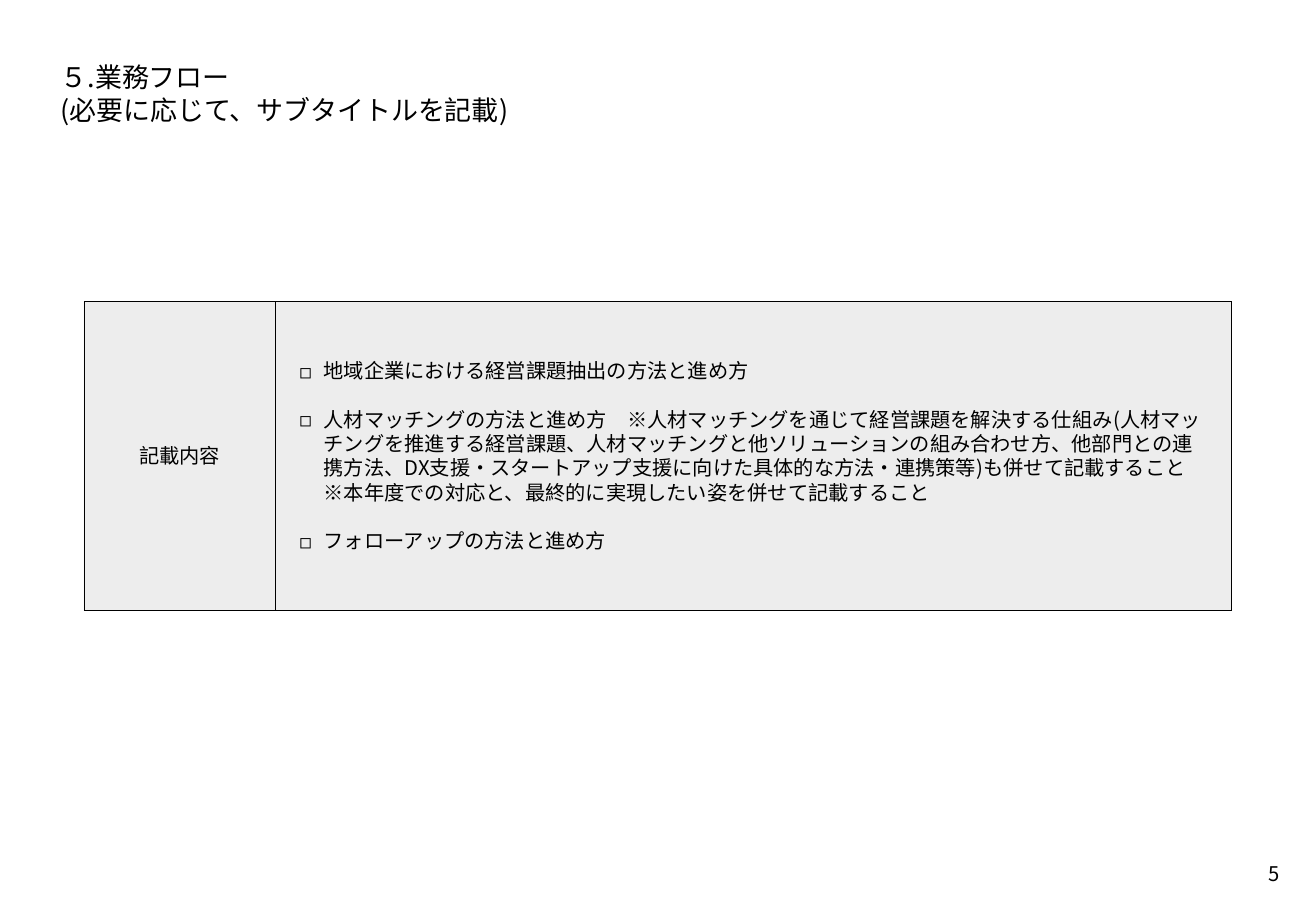
"""Build the workflow guidance slide with its title, label and checklist."""
from dataclasses import dataclass

from pptx import Presentation
from pptx.dml import color
from pptx.enum import dml, shapes, text
from pptx.oxml import ns, xmlchemy
from pptx.shapes import autoshape
from pptx.slide import Slide
from pptx.util import Pt


@dataclass(frozen=True)
class Theme:
    font: str = "Noto Sans CJK JP"
    ink: str = "000000"
    panel: str = "EDEDED"
    title_size: float = 16
    body_size: float = 12
    leading: float = 1.2
    border: float = 0.25
    hang: float = 14.4


@dataclass(frozen=True)
class Block:
    left: float
    top: float
    width: float
    height: float
    items: tuple[str, ...]
    size: float
    inset: float
    align: text.PP_ALIGN = text.PP_ALIGN.LEFT
    anchor: text.MSO_ANCHOR = text.MSO_ANCHOR.TOP
    wrap: bool = True
    gap: float = 0
    bullet: str = ""
    panel: bool = False


THEME = Theme()
PANEL_TOP, PANEL_HEIGHT = 178.6, 182.9
LABEL_LEFT, LABEL_WIDTH, LIST_WIDTH = 49.7, 113.4, 566.9

TITLE = Block(21.6, 21.6, 737.3, 56.9,
              ("５.業務フロー\v(必要に応じて、サブタイトルを記載)",),
              THEME.title_size, 14.4)
CHECKLIST = Block(
    LABEL_LEFT + LABEL_WIDTH, PANEL_TOP, LIST_WIDTH, PANEL_HEIGHT,
    ("地域企業における経営課題抽出の方法と進め方",
     "人材マッチングの方法と進め方　※人材マッチングを通じて経営課題を解決する仕組み"
     "(人材マッチングを推進する経営課題、人材マッチングと他ソリューションの組み合わせ方、"
     "他部門との連携方法、DX支援・スタートアップ支援に向けた具体的な方法・連携策等)"
     "も併せて記載すること\v※本年度での対応と、最終的に実現したい姿を併せて記載すること",
     "フォローアップの方法と進め方"),
    THEME.body_size, 14.4, anchor=text.MSO_ANCHOR.MIDDLE,
    gap=THEME.body_size * THEME.leading, bullet="◻", panel=True)
LABEL = Block(LABEL_LEFT, PANEL_TOP, LABEL_WIDTH, PANEL_HEIGHT, ("記載内容",),
              THEME.body_size, 7.2, text.PP_ALIGN.CENTER,
              text.MSO_ANCHOR.MIDDLE, panel=True)
PAGE_NUMBER = Block(737.3, 503.3, 28.1, 28.1, ("5",), THEME.body_size, 7.2,
                    text.PP_ALIGN.RIGHT, wrap=False)


def apply(target: object, values: dict[str, object]) -> None:
    """Set every named attribute on the target."""
    for name, value in values.items():
        setattr(target, name, value)


def add_child(parent: xmlchemy.BaseOxmlElement, tag: str, **values: str) -> None:
    """Append a DrawingML child with the given attributes."""
    child = parent.makeelement(ns.qn(tag), values)
    parent.append(child)


def paint_panel(box: autoshape.Shape) -> None:
    """Give the box the grey fill and the thin dotted border."""
    box.fill.solid()
    box.fill.fore_color.rgb = color.RGBColor.from_string(THEME.panel)
    box.line.color.rgb = color.RGBColor.from_string(THEME.ink)
    apply(box.line, {"width": Pt(THEME.border),
                     "dash_style": dml.MSO_LINE.ROUND_DOT})


def fill_box(box: autoshape.Shape, block: Block) -> None:
    """Place the box and write its paragraphs."""
    apply(box, {side: Pt(getattr(block, side))
                for side in ("left", "top", "width", "height")})
    frame = box.text_frame
    apply(frame, {"word_wrap": block.wrap,
                  "auto_size": text.MSO_AUTO_SIZE.NONE,
                  "vertical_anchor": block.anchor})
    apply(frame, {f"margin_{side}": Pt(block.inset)
                  for side in ("left", "top", "right", "bottom")})
    if block.panel:
        paint_panel(box)
    for index, item in enumerate(block.items):
        para = frame.add_paragraph() if index else frame.paragraphs[0]
        para.text = item
        apply(para, {"alignment": block.align,
                     "line_spacing": Pt(block.size * THEME.leading),
                     "space_before": Pt(block.gap if index else 0),
                     "space_after": Pt(0)})
        if block.bullet:
            properties = para._p.get_or_add_pPr()
            properties.set("marL", str(Pt(THEME.hang)))
            properties.set("indent", str(-Pt(THEME.hang)))
            add_child(properties, "a:buFont", typeface=THEME.font)
            add_child(properties, "a:buChar", char=block.bullet)
        for span in para.runs:
            apply(span.font, {"name": THEME.font, "size": Pt(block.size)})
            span.font.color.rgb = color.RGBColor.from_string(THEME.ink)
            add_child(span._r.get_or_add_rPr(), "a:ea", typeface=THEME.font)


def add_label(page: Slide) -> autoshape.Shape:
    """Add the plain rectangle for the label."""
    box = page.shapes.add_shape(shapes.MSO_SHAPE.RECTANGLE, *[Pt(0)] * 4)
    box.shadow.inherit = False
    return box


def main() -> None:
    """Build the page and save the deck."""
    deck = Presentation()
    apply(deck, {"slide_width": Pt(780), "slide_height": Pt(540)})
    page = deck.slides.add_slide(deck.slide_layouts[1])
    fill_box(page.shapes.title, TITLE)
    fill_box(page.placeholders[1], CHECKLIST)
    fill_box(add_label(page), LABEL)
    fill_box(page.shapes.add_textbox(*[Pt(0)] * 4), PAGE_NUMBER)
    deck.save("out.pptx")


if __name__ == "__main__":
    main()
